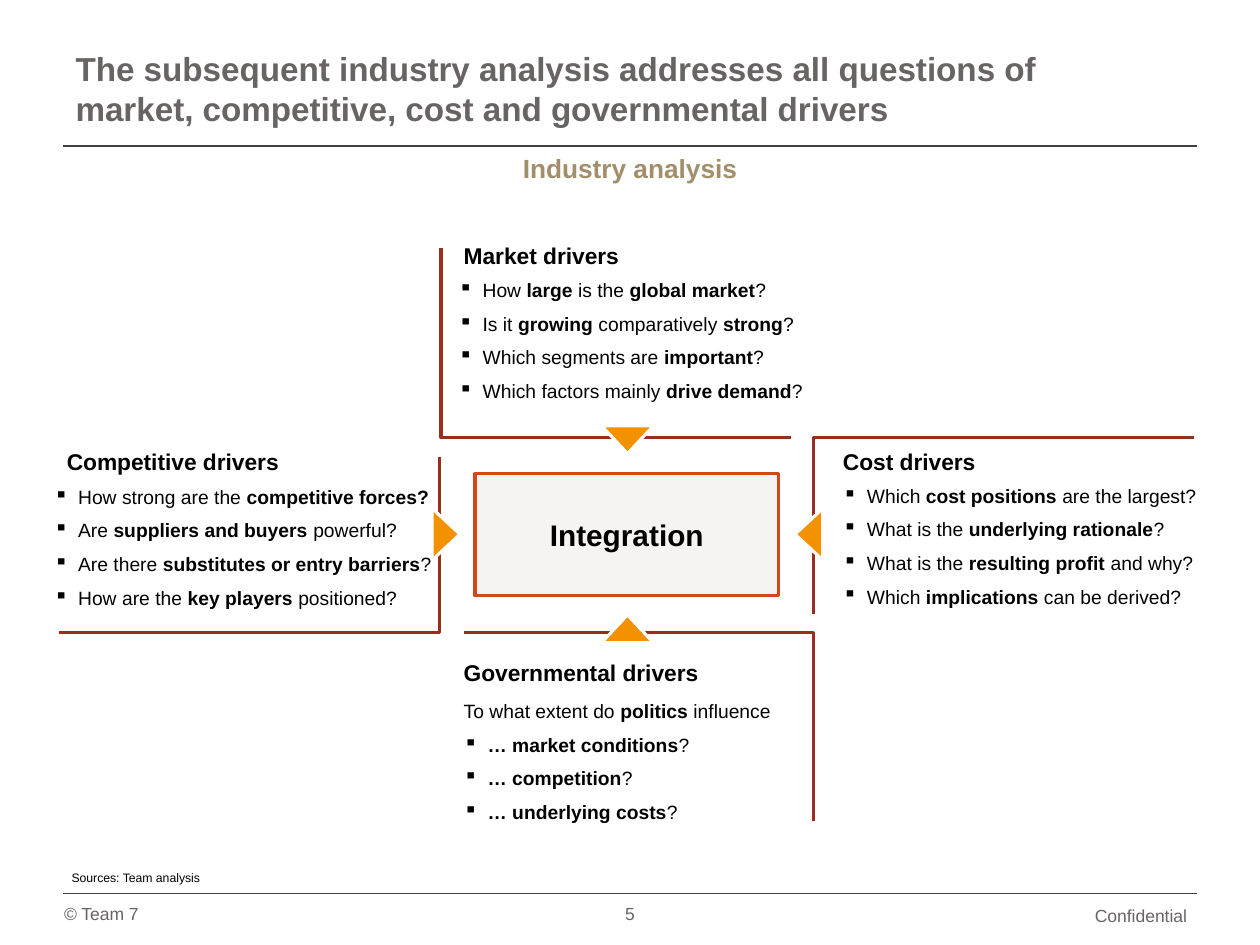
from lxml import etree
from pptx import Presentation
from pptx.dml.color import RGBColor
from pptx.enum import shapes, text
from pptx.oxml import ns
from pptx.util import Inches, Pt

BLACK = RGBColor(0x00, 0x00, 0x00)
WHITE = RGBColor(0xFF, 0xFF, 0xFF)
GRAY = RGBColor(0x69, 0x64, 0x64)
DARK = RGBColor(0x40, 0x40, 0x40)
TAN = RGBColor(0xA2, 0x8E, 0x6A)
RED = RGBColor(0x9B, 0x2D, 0x1F)
RUST = RGBColor(0xD3, 0x48, 0x17)
SAND = RGBColor(0xE9, 0xE5, 0xDC)
GOLD = RGBColor(0xF4, 0x91, 0x00)

LEFT, MID = text.PP_ALIGN.LEFT, text.PP_ALIGN.CENTER
TOP, CENTER, BASE = (text.MSO_ANCHOR.TOP, text.MSO_ANCHOR.MIDDLE,
                     text.MSO_ANCHOR.BOTTOM)
FLUSH = (0, 0, 0, 0)
INSET = (0.1, 0.05, 0.1, 0.05)
FOOT = (0.1, 0.05, 0.1, 0)

DRIVERS = [
    ("Market drivers", (3.68, 1.94, 2.58), (3.64, 2.21, 2.82),
     [(3.5, 1.97), (3.5, 3.47), (6.28, 3.47)],
     ["- How *large* is the *global market*?",
      "- Is it *growing* comparatively *strong*?",
      "- Which segments are *important*?",
      "- Which factors mainly *drive demand*?"]),
    ("Cost drivers", (6.69, 3.57, 2.81), (6.69, 3.84, 2.81),
     [(9.48, 3.47), (6.46, 3.47), (6.46, 4.87)],
     ["- Which *cost positions *are the largest?",
      "- What is the *underlying rationale*?",
      "- What is the *resulting profit *and why?",
      "- Which *implications* can be derived?"]),
    ("Governmental drivers", (3.68, 5.25, 2.62), (3.68, 5.55, 2.62),
     [(6.46, 6.52), (6.46, 5.02), (3.68, 5.02)],
     ["To what extent do *politics* influence",
      "- *… market conditions*?",
      "- *… competition*?",
      "- *… underlying costs*?"]),
    ("Competitive drivers", (0.53, 3.57, 2.81), (0.43, 3.85, 3.09),
     [(0.47, 5.02), (3.49, 5.02), (3.49, 3.63)],
     ["- How strong are the *competitive forces?*",
      "- Are *suppliers and buyers *powerful?",
      "- Are there *substitutes or entry barriers*?",
      "- How are the *key players *positioned?"]),
]


def inch(box):
    return [Inches(v) for v in box]


def bullet(para):
    props = para._p.get_or_add_pPr()
    props.set("marL", str(Inches(0.19)))
    props.set("indent", str(-Inches(0.19)))
    etree.SubElement(props, ns.qn("a:buChar")).set("char", "▪")


def write(shape, lines, size=11, color=BLACK, bold=False, align=LEFT,
          anchor=TOP, inset=FLUSH, gap=0, lead=None):
    frame = shape.text_frame
    frame.word_wrap = True
    frame.auto_size = text.MSO_AUTO_SIZE.NONE
    frame.vertical_anchor = anchor
    (frame.margin_left, frame.margin_top,
     frame.margin_right, frame.margin_bottom) = inch(inset)
    for row, line in enumerate(lines):
        para = frame.add_paragraph() if row else frame.paragraphs[0]
        if line.startswith("- "):
            bullet(para)
            line = line[2:]
        para.alignment = align
        para.space_before = Pt(gap if row else 0)
        if lead:
            para.line_spacing = lead
        for part, words in enumerate(line.split("*")):
            if words:
                run = para.add_run()
                run.text = words
                font = run.font
                font.name, font.size = "Arial", Pt(size)
                font.bold = bold or part % 2 == 1
                font.color.rgb = color


def label(slide, box, *lines, **style):
    write(slide.shapes.add_textbox(*inch(box)), lines, **style)


def rule(slide, y):
    line = slide.shapes.add_connector(
        shapes.MSO_CONNECTOR.STRAIGHT, *inch((0.5, y, 9.5, y)))
    line.line.color.rgb = DARK
    line.line.width = Pt(0.75)
    etree.SubElement(line._element.spPr, ns.qn("a:effectLst"))


def outline(shape, color):
    shape.shadow.inherit = False
    shape.line.color.rgb = color
    shape.line.width = Pt(1.75)


def header(slide, box):
    title = slide.shapes.title
    title.left, title.top, title.width, title.height = inch(box)
    write(title, ["The subsequent industry analysis addresses all questions "
                  "of market, competitive, cost and governmental drivers"],
          size=19, color=GRAY, bold=True, anchor=CENTER, inset=INSET)
    rule(slide, 1.16)
    label(slide, (0.5, 1.16, 9, 0.35), "Industry analysis", size=15,
          color=TAN, bold=True, align=MID, inset=INSET)


def driver(slide, name, head, body, points, lines):
    start, *rest = [inch(p) for p in points]
    path = slide.shapes.build_freeform(*start)
    path.add_line_segments(rest, close=False)
    frame = path.convert_to_shape()
    frame.fill.background()
    outline(frame, RED)
    label(slide, (*head, 0.2), name, size=13, bold=True, lead=0.93)
    label(slide, (*body, 0.99), *lines, gap=6)


def core(slide, box):
    rect = slide.shapes.add_shape(shapes.MSO_SHAPE.RECTANGLE, *inch(box))
    rect.fill.solid()
    rect.fill.fore_color.rgb = SAND
    tint = rect._element.spPr.find(".//" + ns.qn("a:srgbClr"))
    etree.SubElement(tint, ns.qn("a:alpha")).set("val", "40000")
    outline(rect, RUST)
    write(rect, ["Integration"], size=17, bold=True, align=MID, anchor=CENTER)


def arrow(slide, x, y, turn):
    wide, high = 0.41, 0.22
    tip = slide.shapes.add_shape(
        shapes.MSO_SHAPE.ISOSCELES_TRIANGLE,
        *inch((x - wide / 2, y - high / 2, wide, high)))
    tip.rotation = turn
    tip.fill.solid()
    tip.fill.fore_color.rgb = GOLD
    outline(tip, WHITE)


def footer(slide, y):
    label(slide, (0.47, y - 0.23, 8.93, 0.21), "Sources: Team analysis",
          size=7, inset=INSET)
    rule(slide, y)
    style = dict(size=10, color=GRAY)
    label(slide, (0.41, y + 0.01, 2.29, 0.25), "© Team 7", anchor=CENTER,
          inset=FOOT, **style)
    label(slide, (4.15, y + 0.01, 1.7, 0.25), "5", align=MID, anchor=CENTER,
          inset=FOOT, **style)
    label(slide, (8.69, y + 0.11, 1, 0.15), "Confidential", anchor=BASE,
          lead=0.9, **style)


def main():
    deck = Presentation()
    deck.slide_width, deck.slide_height = Inches(10), Inches(7.5)
    slide = deck.slides.add_slide(deck.slide_layouts[5])
    header(slide, (0.5, 0.3, 8.06, 0.8))
    for item in DRIVERS:
        driver(slide, *item)
    core(slide, (3.77, 3.76, 2.41, 0.97))
    for spot in [(3.54, 4.24, 90), (6.42, 4.24, 270),
                 (4.98, 4.99, 0), (4.98, 3.49, 180)]:
        arrow(slide, *spot)
    footer(slide, 7.09)
    deck.save("out.pptx")


if __name__ == "__main__":
    main()
